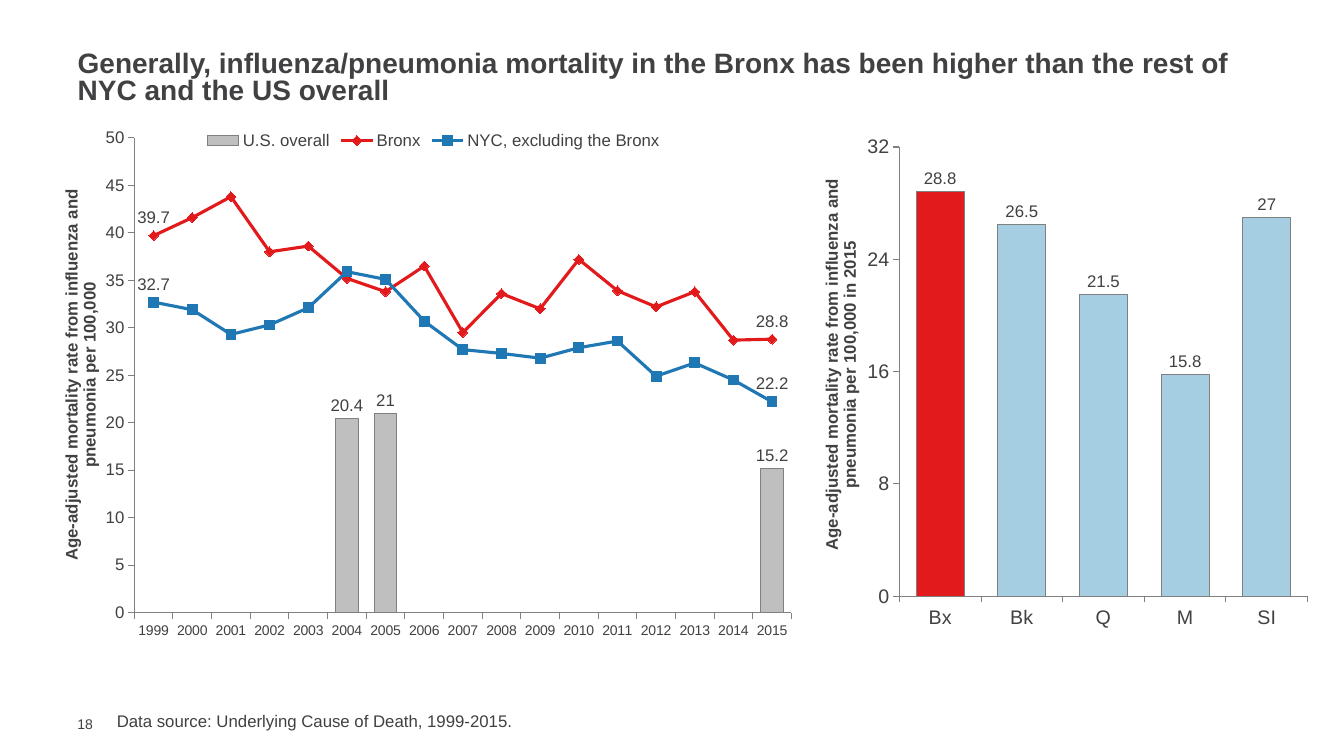
from dataclasses import dataclass
from typing import Optional

from pptx import Presentation
from pptx import util as u
from pptx.chart import data as cd
from pptx.dml.color import RGBColor
from pptx.enum import chart as ce, text
from pptx.oxml import ns, parse_xml

INK = RGBColor(0x41, 0x40, 0x42)
AXIS_GRAY = RGBColor(0x80, 0x80, 0x80)
BAR_GRAY = RGBColor(0xBF, 0xBF, 0xBF)
RED = RGBColor(0xE3, 0x1A, 0x1C)
BLUE = RGBColor(0x1F, 0x78, 0xB4)
LIGHT_BLUE = RGBColor(0xA6, 0xCE, 0xE3)
FONT = "Arial"


@dataclass
class Rates:
    name: str
    values: list
    color: RGBColor
    labelled: tuple = ()
    marker: Optional[ce.XL_MARKER_STYLE] = None


@dataclass
class RateChart:
    box: tuple
    plot: dict
    title: str
    title_at: dict
    categories: list
    series: list
    top: int
    step: int
    category_size: int
    value_size: int


@dataclass
class Label:
    box: tuple
    text: str
    size: int


TREND = RateChart(
    (0.5, 1.08, 7.5, 5.33), dict(x=0.111, y=0.054, w=0.869, h=0.884),
    "Age-adjusted mortality rate from influenza and pneumonia per 100,000",
    dict(x=0.01, y=0.144), [str(year) for year in range(1999, 2016)],
    [Rates("U.S. overall", [None] * 5 + [20.4, 21] + [None] * 9 + [15.2],
           BAR_GRAY, (5, 6, 16)),
     Rates("Bronx", [39.7, 41.6, 43.8, 38, 38.6, 35.2, 33.8, 36.5, 29.5, 33.6,
                     32, 37.2, 33.9, 32.2, 33.8, 28.7, 28.8],
           RED, (0, 16), ce.XL_MARKER_STYLE.DIAMOND),
     Rates("NYC, excluding the Bronx",
           [32.7, 31.9, 29.3, 30.3, 32.1, 35.9, 35.1, 30.7, 27.7, 27.3,
            26.8, 27.9, 28.6, 24.9, 26.3, 24.5, 22.2],
           BLUE, (0, 16), ce.XL_MARKER_STYLE.SQUARE)],
    50, 5, 10, 12)
BOROUGHS = RateChart(
    (8, 1.29, 5, 5.13), dict(x=0.184, y=0.033, w=0.81, h=0.869),
    "Age-adjusted mortality rate from influenza and pneumonia per 100,000 in 2015",
    dict(x=0.023, y=0.089), ["Bx", "Bk", "Q", "M", "SI"],
    [Rates("Series 1", [28.8, 26.5, 21.5, 15.8, 27], LIGHT_BLUE, tuple(range(5)))],
    32, 8, 14, 14)
LABELS = [
    Label((0.67, 7.1, 0.43, 0.17), "18", 10),
    Label((1.06, 7, 9.92, 0.3), "Data source: Underlying Cause of Death, 1999-2015.", 12),
]


def style_font(font, size: int, bold: bool = False) -> None:
    font.name, font.size, font.bold = FONT, u.Pt(size), bold
    font.color.rgb = INK


def style_line(line, color: RGBColor, width: float = 0.75) -> None:
    line.color.rgb = color
    line.width = u.Pt(width)


def set_layout(parent, index: int, place: dict, inner: bool = False) -> None:
    """Fix the place of a chart part as fractions of the chart."""
    for old in parent.findall(ns.qn("c:layout")):
        parent.remove(old)
    target = '<c:layoutTarget val="inner"/>' if inner else ""
    modes = "".join(f'<c:{k}Mode val="edge"/>' for k in "xy")
    values = "".join(f'<c:{k} val="{v}"/>' for k, v in place.items())
    parent.insert(index, parse_xml(
        f'<c:layout {ns.nsdecls("c")}><c:manualLayout>{target}{modes}{values}'
        '</c:manualLayout></c:layout>'))


def move_to_lines(plot_area, first: int) -> None:
    """Turn the column series from the given one on into lines on the same axes."""
    bars = plot_area.find(ns.qn("c:barChart"))
    axes = "".join(f'<c:axId val="{a.get("val")}"/>' for a in bars.findall(ns.qn("c:axId")))
    lines = parse_xml(
        f'<c:lineChart {ns.nsdecls("c")}><c:grouping val="standard"/>'
        f'<c:varyColors val="0"/><c:marker val="1"/>{axes}</c:lineChart>')
    for i, ser in enumerate(bars.findall(ns.qn("c:ser"))[first:]):
        for flag in ser.findall(ns.qn("c:invertIfNegative")):
            ser.remove(flag)
        lines.insert(2 + i, ser)
    bars.addnext(lines)


def style_series(ser, rates: Rates) -> None:
    if rates.marker is None:
        ser.format.fill.solid()
        ser.format.fill.fore_color.rgb = rates.color
        style_line(ser.format.line, AXIS_GRAY)
        position = ce.XL_LABEL_POSITION.OUTSIDE_END
    else:
        style_line(ser.format.line, rates.color, 2.25)
        ser.smooth = False
        ser.marker.style, ser.marker.size = rates.marker, 7
        ser.marker.format.fill.solid()
        ser.marker.format.fill.fore_color.rgb = rates.color
        style_line(ser.marker.format.line, rates.color)
        position = ce.XL_LABEL_POSITION.ABOVE
    if len(rates.labelled) == len(rates.values):
        ser.data_labels.show_value = True
        ser.data_labels.position = position
        style_font(ser.data_labels.font, 12)
        return
    ser.data_labels.show_value = False
    for i in rates.labelled:
        label = ser.points[i].data_label
        style_font(label.font, 12)
        label.position = position


def add_rate_chart(s, spec_: RateChart):
    data = cd.CategoryChartData(number_format="General")
    data.categories = spec_.categories
    for rates in spec_.series:
        data.add_series(rates.name, rates.values)
    chart = s.shapes.add_chart(ce.XL_CHART_TYPE.COLUMN_CLUSTERED,
                               *map(u.Inches, spec_.box), data).chart
    chart.has_title = chart.has_legend = False
    style_font(chart.font, 12)
    plot_area = chart._chartSpace.chart.plotArea
    chart.plots[0].gap_width = 70
    chart.plots[0].vary_by_categories = False
    if len(spec_.series) > 1:
        move_to_lines(plot_area, 1)
    set_layout(plot_area, 0, spec_.plot, inner=True)
    plotted = [ser for plot in chart.plots for ser in plot.series]
    for ser, rates in zip(plotted, spec_.series):
        style_series(ser, rates)

    # Axes
    axis = chart.value_axis
    axis.minimum_scale, axis.maximum_scale, axis.major_unit = 0, spec_.top, spec_.step
    for ax, size in ((chart.category_axis, spec_.category_size), (axis, spec_.value_size)):
        ax.has_major_gridlines = False
        ax.major_tick_mark = ce.XL_TICK_MARK.OUTSIDE
        style_font(ax.tick_labels.font, size)
        style_line(ax.format.line, AXIS_GRAY)
    tf = axis.axis_title.text_frame
    tf.text = spec_.title
    style_font(tf.paragraphs[0].runs[0].font, 12, True)
    body = tf._txBody.bodyPr
    body.set("rot", "-5400000")
    body.set("vert", "horz")
    set_layout(axis.axis_title._element, 1, spec_.title_at)
    return chart


def add_label(s, label: Label) -> None:
    tf = s.shapes.add_textbox(*map(u.Inches, label.box)).text_frame
    tf.word_wrap = True
    tf.vertical_anchor = text.MSO_ANCHOR.MIDDLE
    tf.margin_top = tf.margin_bottom = 0
    tf.text = label.text
    style_font(tf.paragraphs[0].runs[0].font, label.size)


def main() -> None:
    prs = Presentation()
    prs.slide_width, prs.slide_height = u.Inches(13.33), u.Inches(7.5)
    s = prs.slides.add_slide(prs.slide_layouts[5])

    # Title
    sp = s.shapes.title
    sp.left, sp.top, sp.width, sp.height = map(u.Inches, (0.67, 0.33, 12, 0.91))
    tf = sp.text_frame
    tf.text = ("Generally, influenza/pneumonia mortality in the Bronx has been "
               "higher than the rest of NYC and the US overall")
    tf.auto_size = text.MSO_AUTO_SIZE.NONE
    tf.vertical_anchor = text.MSO_ANCHOR.MIDDLE
    p = tf.paragraphs[0]
    p.alignment, p.line_spacing = text.PP_ALIGN.LEFT, 0.8
    style_font(p.runs[0].font, 20, True)

    # Slide number and data source
    for label in LABELS:
        add_label(s, label)

    # Charts
    boroughs = add_rate_chart(s, BOROUGHS)
    bronx = boroughs.plots[0].series[0].points[0].format
    bronx.fill.solid()
    bronx.fill.fore_color.rgb = RED
    style_line(bronx.line, AXIS_GRAY)
    trend = add_rate_chart(s, TREND)
    trend.has_legend = True
    trend.legend.position = ce.XL_LEGEND_POSITION.TOP
    trend.legend.include_in_layout = False
    style_font(trend.legend.font, 12)
    set_layout(trend.legend._element, 1, dict(x=0.2, y=0.035))

    prs.save("out.pptx")


if __name__ == "__main__":
    main()
